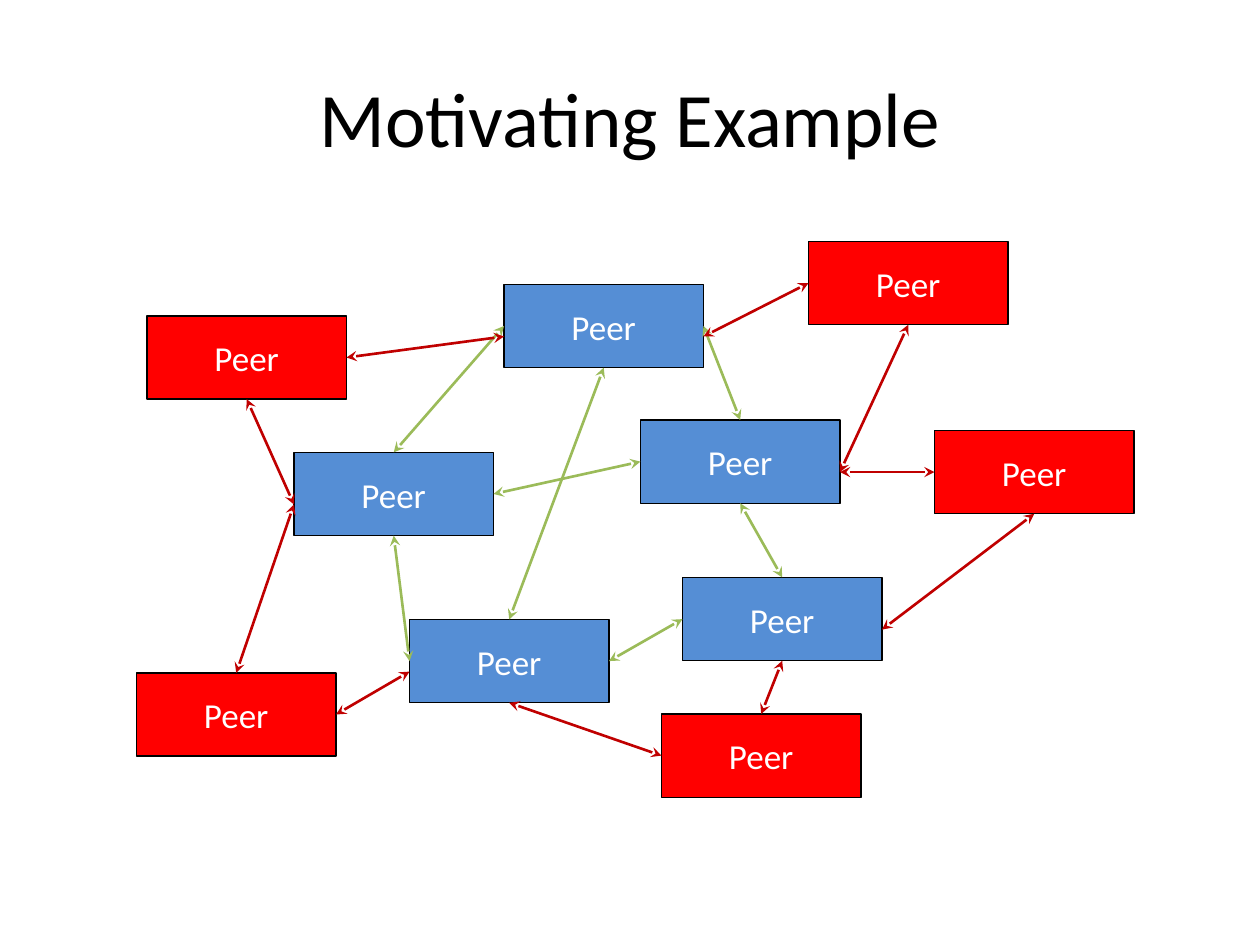
from lxml.etree import SubElement
from pptx import Presentation
from pptx.dml.color import RGBColor
from pptx.enum.shapes import MSO_CONNECTOR, MSO_SHAPE
from pptx.enum.text import MSO_ANCHOR, PP_ALIGN
from pptx.oxml.ns import qn
from pptx.util import Pt

BLACK = RGBColor(0x00, 0x00, 0x00)
WHITE = RGBColor(0xFF, 0xFF, 0xFF)
BLUE = RGBColor(0x55, 0x8E, 0xD5)
RED = RGBColor(0xFF, 0x00, 0x00)
GREEN = RGBColor(0x9B, 0xBB, 0x59)
DARK_RED = RGBColor(0xC0, 0x00, 0x00)

PEER_WIDTH, PEER_HEIGHT = 114, 47.6
SIDE_DROP = 6  # outer links meet the left or right side this far below its middle

# Connection sites of a rectangle, with their place as fractions of its size
TOP, LEFT, BOTTOM, RIGHT = range(4)
SITE_FRACTIONS = ((0.5, 0), (0, 0.5), (0.5, 1), (1, 0.5))

INNER_PEERS = {
    "west": (168, 258.5),
    "north": (288, 162.5),
    "east": (366, 240),
    "south": (234, 354),
    "southeast": (390, 330),
}
INNER_LINKS = (
    ("north", RIGHT, "east", TOP),
    ("north", BOTTOM, "south", TOP),
    ("north", LEFT, "west", TOP),
    ("west", RIGHT, "east", LEFT),
    ("west", BOTTOM, "south", LEFT),
    ("southeast", TOP, "east", BOTTOM),
    ("southeast", LEFT, "south", RIGHT),
)
# Each outer peer: position, then links as (own site, inner peer, its site)
OUTER_PEERS = (
    ((84, 180.5), ((RIGHT, "north", LEFT), (BOTTOM, "west", LEFT))),
    ((78, 384.5), ((TOP, "west", LEFT), (RIGHT, "south", LEFT))),
    ((462, 138), ((LEFT, "north", RIGHT), (BOTTOM, "east", RIGHT))),
    ((534, 246), ((LEFT, "east", RIGHT), (BOTTOM, "southeast", RIGHT))),
    ((378, 408), ((TOP, "southeast", BOTTOM), (LEFT, "south", BOTTOM))),
)


def site_point(shape, site):
    across, down = SITE_FRACTIONS[site]
    return int(shape.left + across * shape.width), int(shape.top + down * shape.height)


class NetworkSlide:
    """Holds the style and the slide that the elements are added to."""

    font_name = "Calibri"
    title_size = Pt(44)
    label_size = Pt(20)
    border_width = Pt(0.75)
    link_width = Pt(1.5)

    def __init__(self, presentation):
        self.slide = presentation.slides.add_slide(presentation.slide_layouts[5])

    def set_text(self, text_frame, text, size, color):
        text_frame.text = text
        text_frame.vertical_anchor = MSO_ANCHOR.MIDDLE
        paragraph = text_frame.paragraphs[0]
        paragraph.alignment = PP_ALIGN.CENTER
        font = paragraph.runs[0].font
        font.name, font.size = self.font_name, size
        font.color.rgb = color

    def add_title(self, text):
        title = self.slide.shapes.title
        title.left, title.top, title.width, title.height = Pt(36), Pt(21.6), Pt(648), Pt(90)
        self.set_text(title.text_frame, text, self.title_size, BLACK)

    def add_group(self):
        return self.slide.shapes.add_group_shape().shapes

    def add_peer(self, shapes, position, fill_color):
        left, top = position
        peer = shapes.add_shape(
            MSO_SHAPE.RECTANGLE, Pt(left), Pt(top), Pt(PEER_WIDTH), Pt(PEER_HEIGHT)
        )
        peer.shadow.inherit = False
        peer.fill.solid()
        peer.fill.fore_color.rgb = fill_color
        peer.line.color.rgb = BLACK
        peer.line.width = self.border_width
        self.set_text(peer.text_frame, "Peer", self.label_size, WHITE)
        peer.text_frame.word_wrap = False
        return peer

    def add_link(self, shapes, start, start_site, end, end_site, color, drop=0):
        """Join two peers; a link with a drop ends below the site and is not glued there."""
        end_x, end_y = site_point(end, end_site)
        link = shapes.add_connector(
            MSO_CONNECTOR.STRAIGHT, *site_point(start, start_site), end_x, end_y + Pt(drop)
        )
        link.begin_connect(start, start_site)
        if not drop:
            link.end_connect(end, end_site)
        link.line.color.rgb = color
        link.line.width = self.link_width
        for tag in ("a:headEnd", "a:tailEnd"):
            SubElement(link.get_or_add_ln(), qn(tag), type="stealth")
        SubElement(link._element.spPr, qn("a:effectLst"))


def main():
    presentation = Presentation()
    presentation.slide_width, presentation.slide_height = Pt(720), Pt(540)
    network = NetworkSlide(presentation)
    network.add_title("Motivating Example")

    shapes = network.slide.shapes
    inner = {
        name: network.add_peer(shapes, position, BLUE)
        for name, position in INNER_PEERS.items()
    }
    for start, start_site, end, end_site in INNER_LINKS:
        network.add_link(shapes, inner[start], start_site, inner[end], end_site, GREEN)

    for position, links in OUTER_PEERS:
        group = network.add_group()
        peer = network.add_peer(group, position, RED)
        for site, name, inner_site in links:
            drop = SIDE_DROP if inner_site in (LEFT, RIGHT) else 0
            network.add_link(group, peer, site, inner[name], inner_site, DARK_RED, drop)

    presentation.save("out.pptx")


if __name__ == "__main__":
    main()
